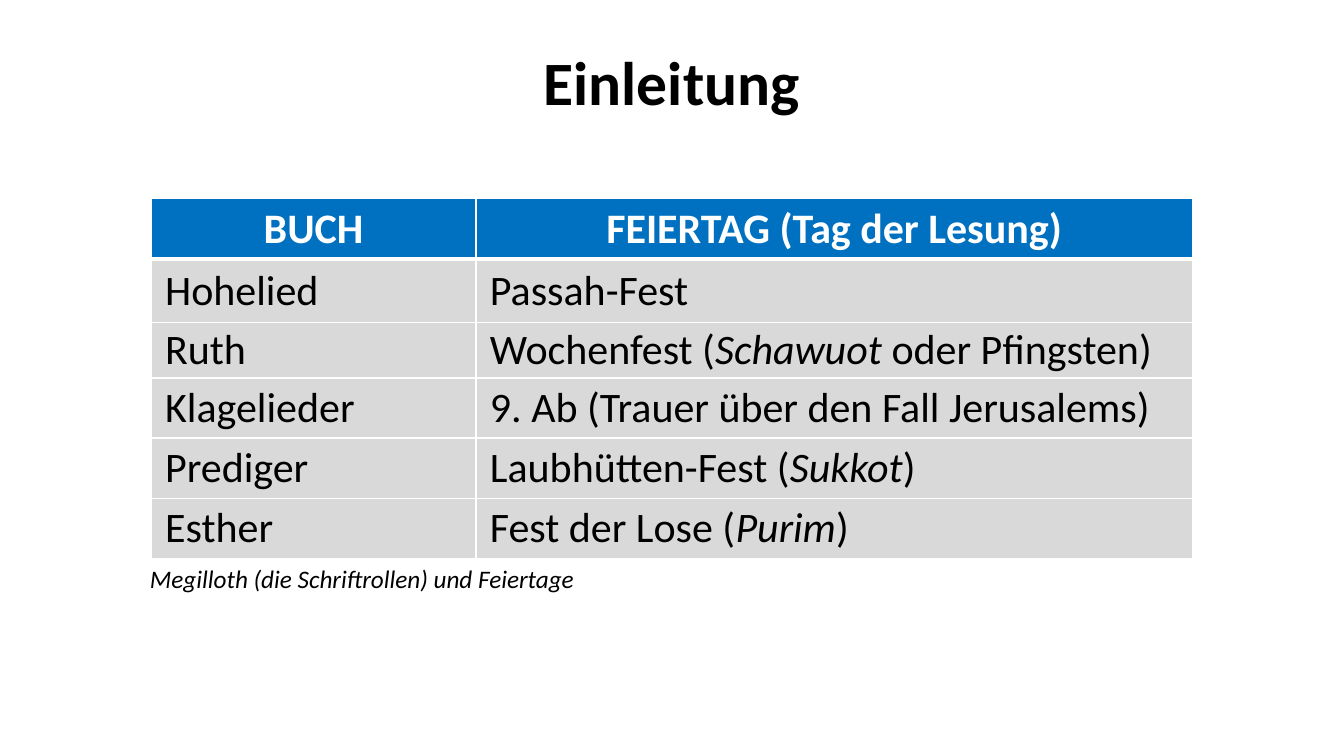
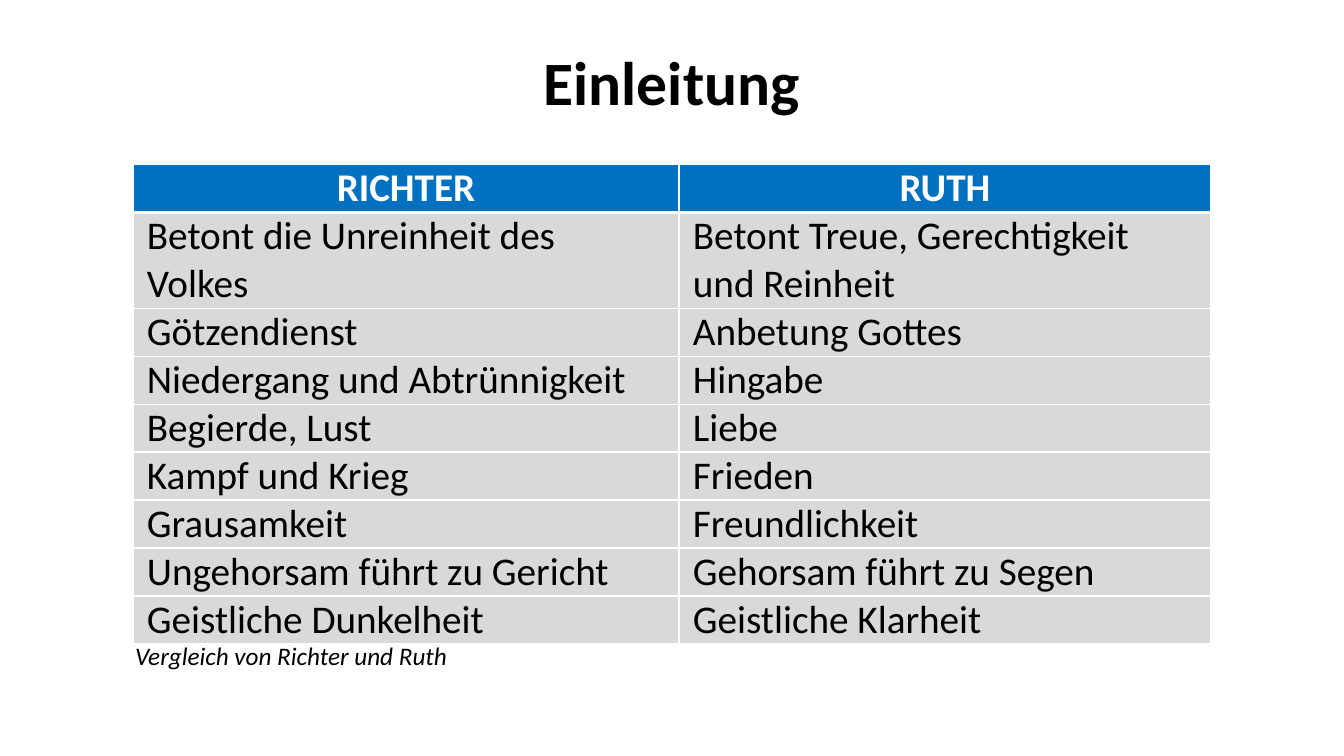
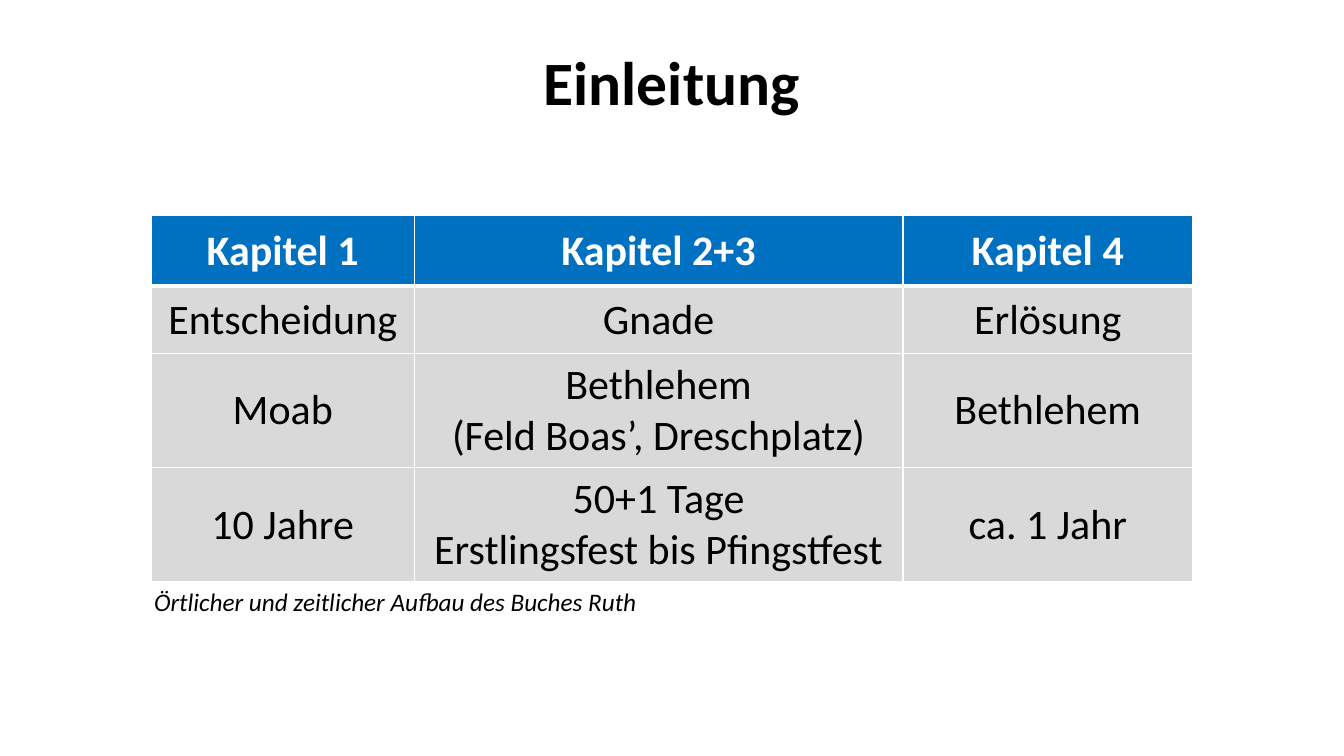
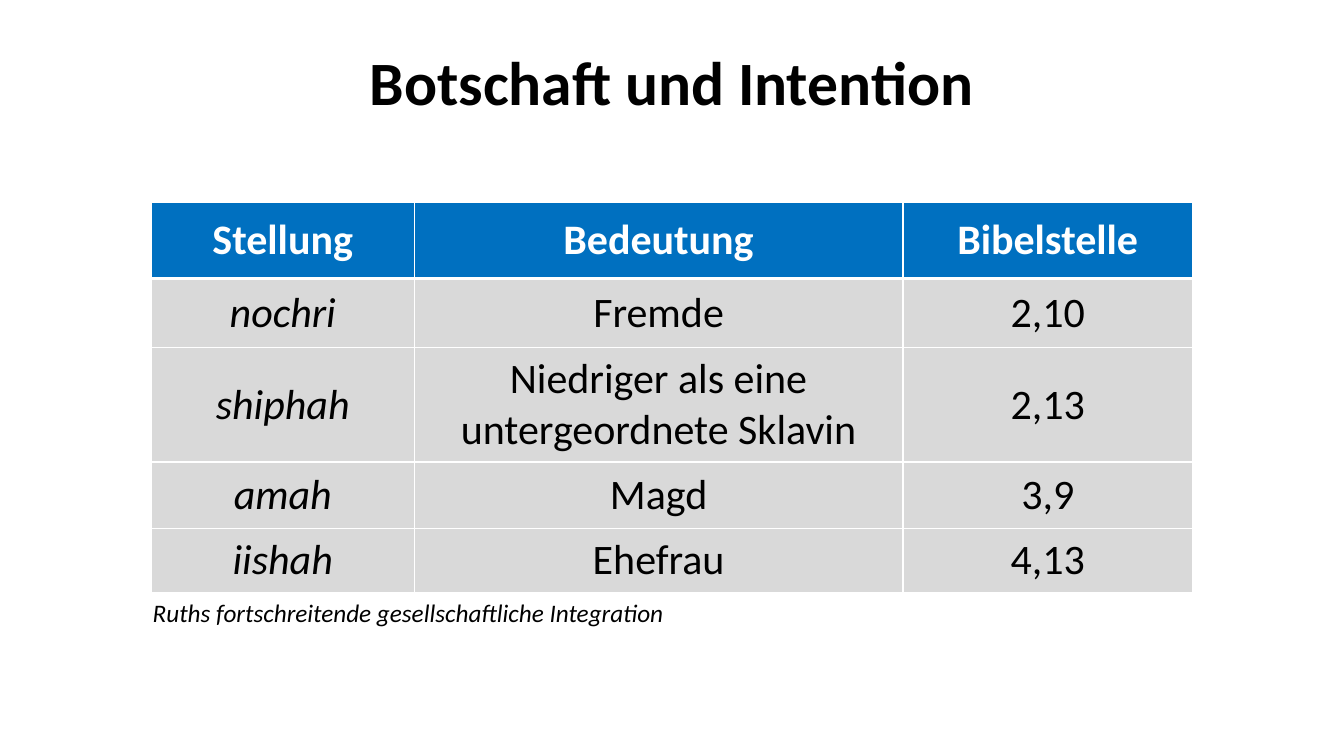
from lxml.etree import SubElement
from pptx import Presentation
from pptx.dml.color import RGBColor
from pptx.enum.text import MSO_ANCHOR as ANCHOR, MSO_AUTO_SIZE as AUTO, PP_ALIGN as ALIGN
from pptx.oxml.ns import qn
from pptx.util import Pt

BLACK, WHITE, BLUE, GREY = "000000", "FFFFFF", "0070C0", "D9D9D9"


def rgb(value):
    return RGBColor.from_string(value)


class Deck:
    font = "Calibri"

    def __init__(self):
        self.prs = Presentation()
        self.prs.slide_width, self.prs.slide_height = Pt(960), Pt(540)
        self.s = None

    def add_text(self, p, text, size, color=BLACK, bold=False, italic=False):
        """Fill a paragraph; parts between asterisks are set in italics."""
        for i, part in enumerate(text.split("*")):
            if not part:
                continue
            r = p.add_run()
            r.text = part
            r.font.name, r.font.size = self.font, Pt(size)
            r.font.bold, r.font.italic = bold, italic or i % 2 == 1
            r.font.color.rgb = rgb(color)

    def slide(self, title):
        self.s = self.prs.slides.add_slide(self.prs.slide_layouts[5])
        sp = self.s.shapes.title
        sp.left, sp.top, sp.width, sp.height = Pt(66), Pt(28.75), Pt(828), Pt(64)
        tf = sp.text_frame
        tf.word_wrap, tf.auto_size = True, AUTO.NONE
        tf.vertical_anchor = ANCHOR.MIDDLE
        p = tf.paragraphs[0]
        p.alignment, p.line_spacing = ALIGN.CENTER, 0.9
        self.add_text(p, title, 44, bold=True)

    def border(self, cell, **widths):
        """Draw white cell borders; must run before the cell is filled."""
        tc_pr = cell._tc.get_or_add_tcPr()
        for side in "LRTB":
            ln = SubElement(tc_pr, qn(f"a:ln{side}"), w=str(Pt(widths.get(side, 1))))
            fill = SubElement(ln, qn("a:solidFill"))
            SubElement(fill, qn("a:srgbClr"), val=WHITE)

    def cell(self, cell, text, row, size, align):
        header = row == 0
        self.border(cell, T=3 if row == 1 else 1, B=3 if header else 1)
        cell.fill.solid()
        cell.fill.fore_color.rgb = rgb(BLUE if header else GREY)
        cell.vertical_anchor = ANCHOR.MIDDLE
        cell.margin_left = cell.margin_right = Pt(10)
        cell.margin_top = cell.margin_bottom = 0
        tf = cell.text_frame
        for i, line in enumerate(text.split("\n")):
            p = tf.add_paragraph() if i else tf.paragraphs[0]
            p.alignment = ALIGN.CENTER if header else align
            self.add_text(p, line, size, WHITE if header else BLACK, bold=header)

    def table(self, left, top, widths, heights, rows, size=30, align=ALIGN.CENTER):
        """Add a table and return the y position of its bottom edge."""
        frame = self.s.shapes.add_table(len(rows), len(widths), Pt(left), Pt(top),
                                        Pt(sum(widths)), Pt(sum(heights)))
        table = frame.table
        table.horz_banding = False
        for col, width in zip(table.columns, widths):
            col.width = Pt(width)
        for row, height in zip(table.rows, heights):
            row.height = Pt(height)
        for i, texts in enumerate(rows):
            for j, text in enumerate(texts):
                self.cell(table.cell(i, j), text, i, size, align)
        return top + sum(heights)

    def caption(self, left, top, width, text):
        sp = self.s.shapes.add_textbox(Pt(left), Pt(top), Pt(width), Pt(29))
        tf = sp.text_frame
        tf.word_wrap, tf.auto_size = False, AUTO.SHAPE_TO_FIT_TEXT
        self.add_text(tf.paragraphs[0], text, 18, italic=True)


def main():
    deck = Deck()
    three_cols = [188, 349, 207]

    deck.slide("Einleitung")
    bottom = deck.table(108, 142, [232, 512], [43, 45.5, 39.5, 43, 43, 43], [
        ("BUCH", "FEIERTAG (Tag der Lesung)"),
        ("Hohelied", "Passah-Fest"),
        ("Ruth", "Wochenfest (*Schawuot* oder Pfingsten)"),
        ("Klagelieder", "9. Ab (Trauer über den Fall Jerusalems)"),
        ("Prediger", "Laubhütten-Fest (*Sukkot*)"),
        ("Esther", "Fest der Lose (*Purim*)"),
    ], align=ALIGN.LEFT)
    deck.caption(100, bottom, 324, "Megilloth (die Schriftrollen) und Feiertage")

    deck.slide("Einleitung")
    bottom = deck.table(95, 117.5, [390, 380], [33.6, 67.2] + [33.6] * 7, [
        ("RICHTER", "RUTH"),
        ("Betont die Unreinheit des Volkes", "Betont Treue, Gerechtigkeit und Reinheit"),
        ("Götzendienst", "Anbetung Gottes"),
        ("Niedergang und Abtrünnigkeit", "Hingabe"),
        ("Begierde, Lust", "Liebe"),
        ("Kampf und Krieg", "Frieden"),
        ("Grausamkeit", "Freundlichkeit"),
        ("Ungehorsam führt zu Gericht", "Gehorsam führt zu Segen"),
        ("Geistliche Dunkelheit", "Geistliche Klarheit"),
    ], size=28, align=ALIGN.LEFT)
    deck.caption(89.5, bottom, 240, "Vergleich von Richter und Ruth")

    deck.slide("Einleitung")
    bottom = deck.table(108, 154, three_cols, [50.5, 48, 81.5, 81.5], [
        ("Kapitel 1", "Kapitel 2+3", "Kapitel 4"),
        ("Entscheidung", "Gnade", "Erlösung"),
        ("Moab", "Bethlehem\n(Feld Boas’, Dreschplatz)", "Bethlehem"),
        ("10 Jahre", "50+1 Tage\nErstlingsfest bis Pfingstfest", "ca. 1 Jahr"),
    ])
    deck.caption(103, bottom, 363, "Örtlicher und zeitlicher Aufbau des Buches Ruth")

    deck.slide("Botschaft und Intention")
    bottom = deck.table(108, 144.5, three_cols, [54.5, 49.5, 81.5, 47.5, 45.5], [
        ("Stellung", "Bedeutung", "Bibelstelle"),
        ("*nochri*", "Fremde", "2,10"),
        ("*shiphah*", "Niedriger als eine untergeordnete Sklavin", "2,13"),
        ("*amah*", "Magd", "3,9"),
        ("*iishah*", "Ehefrau", "4,13"),
    ])
    deck.caption(102, bottom, 384, "Ruths fortschreitende gesellschaftliche Integration")

    deck.prs.save("out.pptx")


if __name__ == "__main__":
    main()
